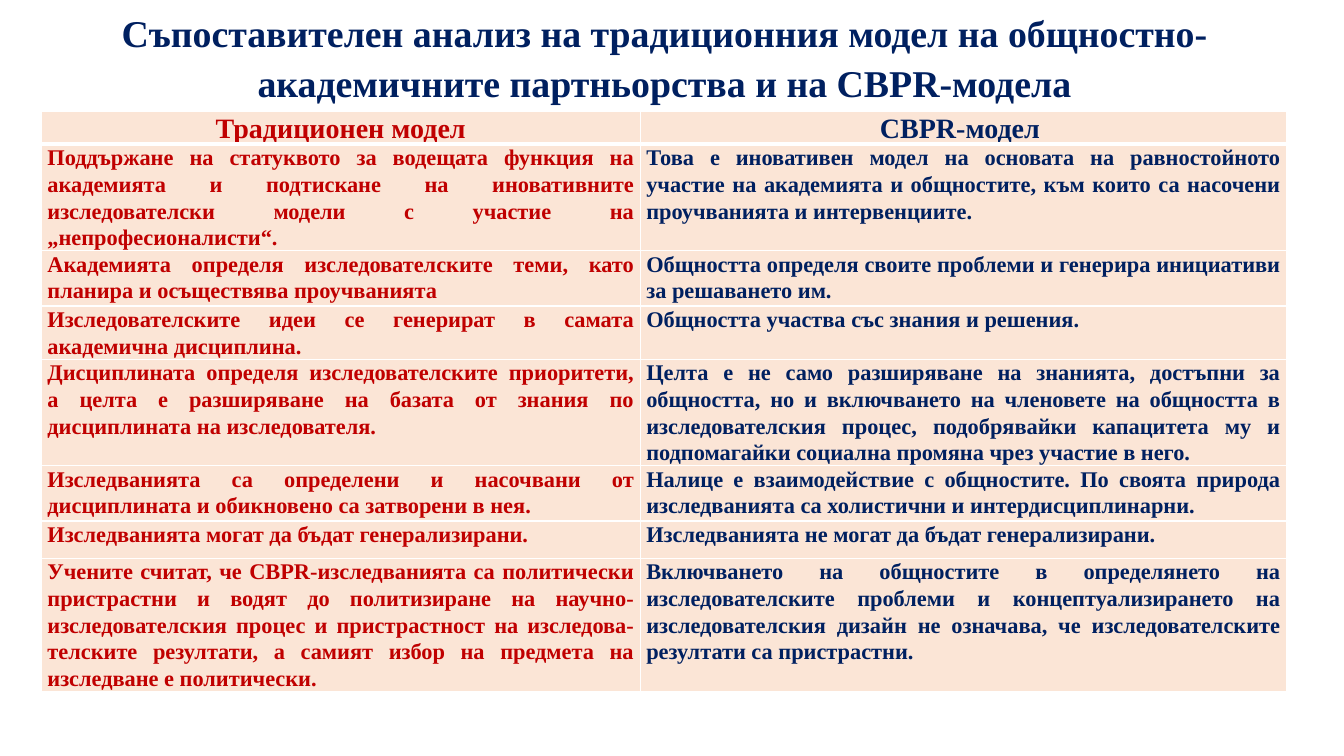
from dataclasses import dataclass

from lxml.etree import SubElement
from pptx import Presentation
from pptx.dml.color import RGBColor
from pptx.enum.text import MSO_ANCHOR, PP_ALIGN
from pptx.oxml.ns import qn
from pptx.slide import Slide
from pptx.table import _Cell
from pptx.text.text import _Paragraph
from pptx.util import Inches, Length, Pt

SLIDE_WIDTH = Inches(13.33)
SLIDE_HEIGHT = Inches(7.5)
FONT_NAME = "Times New Roman"
NAVY = RGBColor(0x00, 0x20, 0x60)
RED = RGBColor(0xC0, 0x00, 0x00)
PEACH = RGBColor(0xFB, 0xE5, 0xD6)
WHITE = RGBColor(0xFF, 0xFF, 0xFF)
COLUMN_COLORS = (RED, NAVY)
COLUMN_PERCENTS = (44.56, 48.09)
TITLE = (
    "Съпоставителен анализ на традиционния модел на "
    "общностно-академичните партньорства и на CBPR-модела"
)


@dataclass(frozen=True)
class ComparisonRow:
    height_percent: float
    traditional: str
    participatory: str
    is_header: bool = False


ROWS = (
    ComparisonRow(4.13, "Традиционен модел", "CBPR-модел ", True),
    ComparisonRow(
        11.07,
        "Поддържане на статуквото за водещата функция на академията и подтискане на "
        "иновативните изследователски модели с участие на „непрофесионалисти“.",
        "Това е иновативен модел на основата на равностойното участие на академията и "
        "общностите, към които са насочени проучванията и интервенциите.",
    ),
    ComparisonRow(
        7.33,
        "Академията определя изследователските теми, като планира и осъществява проучванията",
        "Общността определя своите проблеми и генерира инициативи за решаването им.",
    ),
    ComparisonRow(
        6.67,
        "Изследователските идеи се генерират в самата академична дисциплина.",
        "Общността участва със знания и решения.",
    ),
    ComparisonRow(
        13.73,
        "Дисциплината определя изследователските приоритети, а целта е разширяване на "
        "базата от знания по дисциплината на изследователя.",
        "Целта е не само разширяване на знанията, достъпни за общността, но и включването "
        "на членовете на общността в изследователския процес, подобрявайки капацитета му "
        "и подпомагайки социална промяна чрез участие в него.",
    ),
    ComparisonRow(
        7.33,
        "Изследванията са определени и насочвани от дисциплината и обикновено са "
        "затворени в нея.",
        "Налице е взаимодействие с общностите. По своята природа изследванията са "
        "холистични и интердисциплинарни.",
    ),
    ComparisonRow(
        4.93,
        "Изследванията могат да бъдат генерализирани.",
        "Изследванията не могат да бъдат генерализирани.",
    ),
    ComparisonRow(
        16.8,
        "Учените считат, че CBPR-изследванията са политически пристрастни и водят до "
        "политизиране на научно-изследователския процес и пристрастност на "
        "изследова-телските резултати, а самият избор на предмета на изследване е "
        "политически.",
        "Включването на общностите в определянето на изследователските проблеми и "
        "концептуализирането на изследователския дизайн не означава, че "
        "изследователските резултати са пристрастни.",
    ),
)


def across(percent: float) -> Length:
    return Length(round(SLIDE_WIDTH * percent / 100))


def down(percent: float) -> Length:
    return Length(round(SLIDE_HEIGHT * percent / 100))


def write_paragraph(
    paragraph: _Paragraph,
    text: str,
    size: float,
    color: RGBColor,
    alignment: PP_ALIGN,
    line_spacing: float,
) -> None:
    paragraph.alignment = alignment
    paragraph.line_spacing = line_spacing
    run = paragraph.add_run()
    run.text = text
    run.font.name = FONT_NAME
    run.font.size = Pt(size)
    run.font.bold = True
    run.font.color.rgb = color


def draw_borders(cell: _Cell, top: float, bottom: float) -> None:
    properties = cell._tc.get_or_add_tcPr()
    widths = {"a:lnL": 1, "a:lnR": 1, "a:lnT": top, "a:lnB": bottom}
    for position, (tag, width) in enumerate(widths.items()):
        line = SubElement(properties, qn(tag), w=str(Pt(width)))
        fill = SubElement(line, qn("a:solidFill"))
        SubElement(fill, qn("a:srgbClr"), val=str(WHITE))
        properties.insert(position, line)


def draw_cell(cell: _Cell, text: str, color: RGBColor, row_index: int) -> None:
    is_header = ROWS[row_index].is_header
    follows_header = row_index > 0 and ROWS[row_index - 1].is_header
    cell.margin_left = cell.margin_right = Inches(0.06)
    cell.margin_top = cell.margin_bottom = 0
    cell.vertical_anchor = MSO_ANCHOR.TOP
    cell.fill.solid()
    cell.fill.fore_color.rgb = PEACH
    draw_borders(cell, 3 if follows_header else 1, 3 if is_header else 1)
    write_paragraph(
        cell.text_frame.paragraphs[0],
        text,
        20 if is_header else 16,
        color,
        PP_ALIGN.CENTER if is_header else PP_ALIGN.JUSTIFY,
        1.07,
    )


def draw_comparison(slide: Slide) -> None:
    shape = slide.shapes.add_table(
        len(ROWS),
        len(COLUMN_PERCENTS),
        across(3.08),
        down(14.67),
        across(sum(COLUMN_PERCENTS)),
        down(sum(row.height_percent for row in ROWS)),
    )
    table = shape.table
    for column, percent in zip(table.columns, COLUMN_PERCENTS):
        column.width = across(percent)
    for row_index, row in enumerate(ROWS):
        table.rows[row_index].height = down(row.height_percent)
        texts = (row.traditional, row.participatory)
        for column_index, (text, color) in enumerate(zip(texts, COLUMN_COLORS)):
            draw_cell(table.cell(row_index, column_index), text, color, row_index)


def draw_title(slide: Slide) -> None:
    shape = slide.shapes.add_textbox(across(5.7), 0, across(87.47), down(20.13))
    shape.text_frame.word_wrap = True
    shape.text_frame.vertical_anchor = MSO_ANCHOR.TOP
    write_paragraph(
        shape.text_frame.paragraphs[0], TITLE, 27, NAVY, PP_ALIGN.CENTER, 1.1
    )


def main() -> None:
    presentation = Presentation()
    presentation.slide_width = SLIDE_WIDTH
    presentation.slide_height = SLIDE_HEIGHT
    slide = presentation.slides.add_slide(presentation.slide_layouts[6])
    draw_comparison(slide)
    draw_title(slide)
    presentation.save("out.pptx")


if __name__ == "__main__":
    main()
